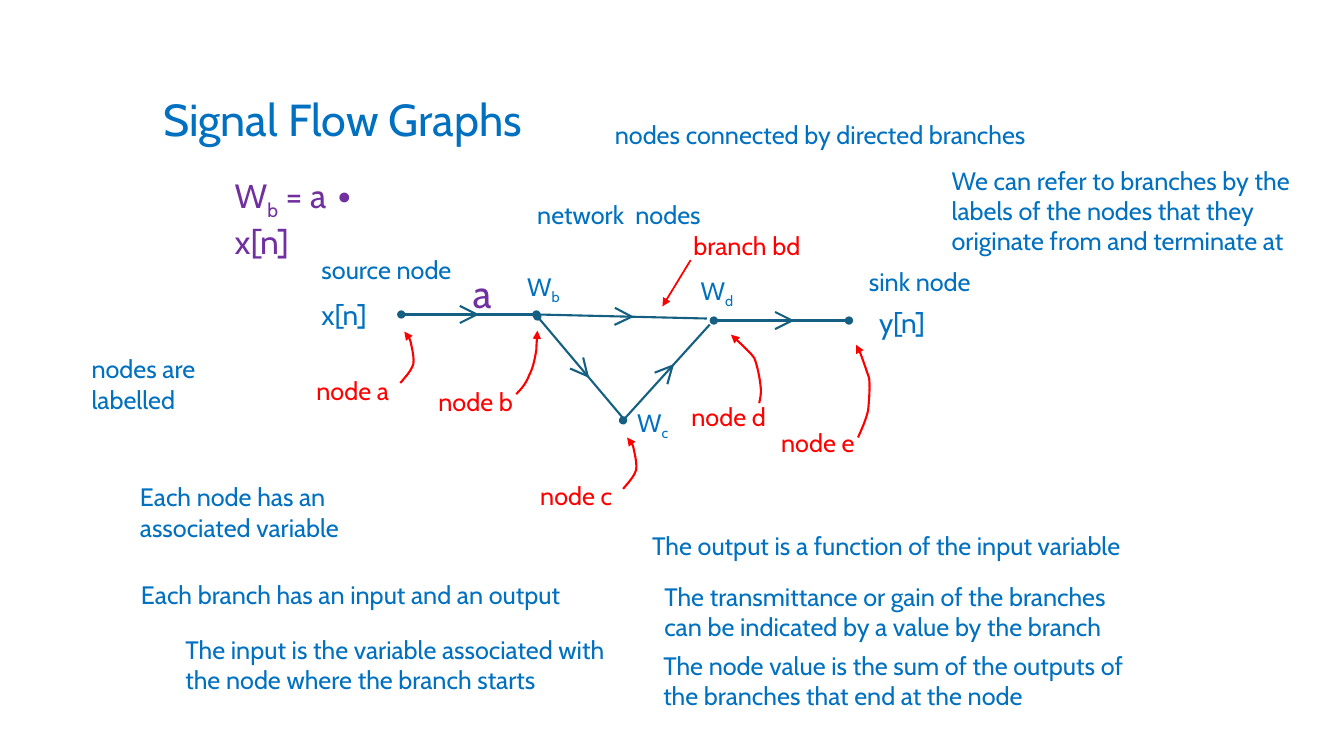
import math
from dataclasses import dataclass

import lxml.etree
import pptx
import pptx.dml.color
import pptx.enum.shapes
import pptx.enum.text
import pptx.oxml.ns
import pptx.util

Inches = pptx.util.Inches
Point = tuple[float, float]

FONT = "Cabin"
BLUE, RED, PURPLE, TEAL = "0070C0", "FF0000", "7030A0", "156082"
BARB_LENGTH, BARB_HALF_WIDTH = 0.17, 0.085
CURVE_STEPS = 6


@dataclass
class Label:
    text: str
    left: float
    top: float
    width: float
    height: float = 0.4
    color: str = BLUE
    size: int = 18
    subscript: str = ""
    rest: str = ""


@dataclass
class Branch:
    start: Point
    end: Point
    tip_share: float  # how far along the branch its direction mark sits
    tail: str = ""


@dataclass
class Pointer:
    start: Point
    curves: list[tuple[Point, Point, Point]]


def rgb(color: str) -> pptx.dml.color.RGBColor:
    return pptx.dml.color.RGBColor.from_string(color)


def style_line(shape, color: str, width: float, head: str = "", tail: str = "") -> None:
    shape.line.color.rgb = rgb(color)
    shape.line.width = pptx.util.Pt(width)
    line_xml = shape.line._get_or_add_ln()
    for tag, kind in {"a:headEnd": head, "a:tailEnd": tail}.items():
        if kind:
            lxml.etree.SubElement(line_xml, pptx.oxml.ns.qn(tag), type=kind)


def add_line(shapes, start: Point, end: Point, color: str, width: float,
             head: str = "", tail: str = "") -> None:
    line = shapes.add_connector(pptx.enum.shapes.MSO_CONNECTOR.STRAIGHT,
                                *map(Inches, (*start, *end)))
    style_line(line, color, width, head, tail)
    lxml.etree.SubElement(line._element.spPr, pptx.oxml.ns.qn("a:effectLst"))


def add_label(shapes, label: Label) -> None:
    box = shapes.add_textbox(*map(Inches, (label.left, label.top, label.width, label.height)))
    frame_format = {"word_wrap": True,
                    "auto_size": pptx.enum.text.MSO_AUTO_SIZE.SHAPE_TO_FIT_TEXT}
    for name, value in frame_format.items():
        setattr(box.text_frame, name, value)
    font_format = {"name": FONT, "size": pptx.util.Pt(label.size)}
    for text, lowered in ((label.text, False), (label.subscript, True), (label.rest, False)):
        if not text:
            continue
        run = box.text_frame.paragraphs[0].add_run()
        run.text = text
        for name, value in font_format.items():
            setattr(run.font, name, value)
        run.font.color.rgb = rgb(label.color)
        if lowered:
            run._r.get_or_add_rPr().set("baseline", "-25000")


def add_branch(shapes, branch: Branch) -> None:
    group = shapes.add_group_shape().shapes
    (x1, y1), (x2, y2) = branch.start, branch.end
    add_line(group, branch.start, branch.end, TEAL, 1.5, "oval", branch.tail)
    length = math.dist(branch.start, branch.end)
    ux, uy = (x2 - x1) / length, (y2 - y1) / length
    tip = (x1 + branch.tip_share * (x2 - x1), y1 + branch.tip_share * (y2 - y1))
    for side in (BARB_HALF_WIDTH, -BARB_HALF_WIDTH):
        barb = (tip[0] - BARB_LENGTH * ux + side * uy, tip[1] - BARB_LENGTH * uy - side * ux)
        add_line(group, barb, tip, TEAL, 1.5)


def bezier(p0: Point, p1: Point, p2: Point, p3: Point, t: float) -> Point:
    weights = ((1 - t) ** 3, 3 * t * (1 - t) ** 2, 3 * t * t * (1 - t), t ** 3)
    x, y = (sum(w * p[axis] for w, p in zip(weights, (p0, p1, p2, p3))) for axis in (0, 1))
    return x, y


def add_pointer(shapes, pointer: Pointer) -> None:
    points = [pointer.start]
    for curve in pointer.curves:
        begin = points[-1]
        points += [bezier(begin, *curve, step / CURVE_STEPS) for step in range(1, CURVE_STEPS + 1)]
    first, *others = [(Inches(x), Inches(y)) for x, y in points]
    outline = shapes.build_freeform(*first, scale=1.0)
    outline.add_line_segments(others, close=False)
    arrow = outline.convert_to_shape()
    arrow.fill.background()
    arrow.shadow.inherit = False
    style_line(arrow, RED, 1.5, tail="triangle")


def shifted(pointer: Pointer, dx: float, dy: float) -> Pointer:
    def move(point: Point) -> Point:
        return point[0] + dx, point[1] + dy

    return Pointer(move(pointer.start),
                   [(move(a), move(b), move(c)) for a, b, c in pointer.curves])


BRANCHES = [
    Branch((5.32, 3.12), (7.01, 3.16), 0.56),
    Branch((7.08, 3.18), (8.42, 3.18), 0.58, "oval"),
    Branch((5.33, 3.14), (6.19, 4.16), 0.58),
    Branch((6.18, 4.17), (7.04, 3.22), 0.57),
    Branch((3.98, 3.12), (5.32, 3.12), 0.56),
]

NODE_A = Pointer((3.97, 3.8), [
    ((4.02, 3.74), (4.08, 3.68), (4.1, 3.61)),
    ((4.11, 3.54), (4.08, 3.43), (4.07, 3.38)),
    ((4.05, 3.33), (4.03, 3.31), (4.01, 3.29))])
NODE_B = Pointer((5.12, 3.91), [
    ((5.18, 3.85), (5.22, 3.8), (5.25, 3.72)),
    ((5.29, 3.65), (5.31, 3.53), (5.32, 3.47)),
    ((5.32, 3.41), (5.33, 3.32), (5.33, 3.28))])
NODE_C = shifted(NODE_A, 2.21, 1.05)
NODE_D = Pointer((7.53, 4), [
    ((7.55, 3.91), (7.55, 3.88), (7.54, 3.8)),
    ((7.53, 3.73), (7.51, 3.62), (7.48, 3.55)),
    ((7.44, 3.49), (7.27, 3.34), (7.25, 3.32))])
NODE_E = Pointer((8.51, 4.34), [
    ((8.55, 4.25), (8.59, 4.16), (8.61, 4.07)),
    ((8.62, 3.97), (8.63, 3.84), (8.62, 3.75)),
    ((8.6, 3.7), (8.52, 3.44), (8.49, 3.42))])

LABELS = [
    Label("Signal Flow Graphs", 1.52, 0.86, 7.61, 0.64, size=32),
    # Signals, gain and node variables
    Label("x[n]", 3.09, 2.9, 0.66, 0.44, size=20),
    Label("y[n]", 8.62, 2.98, 0.8, 0.44, size=20),
    Label("a", 4.59, 2.62, 0.48, 0.57, PURPLE, 28),
    Label("W", 5.13, 2.64, 0.59, subscript="b"),
    Label("W", 6.85, 2.68, 0.59, subscript="d"),
    Label("W", 6.22, 3.99, 0.59, subscript="c"),
    Label("W", 2.23, 1.69, 1.97, 0.5, PURPLE, 24, "b", " = a ∙ x[n]"),
    # Names of nodes and branches
    Label("sink node", 8.52, 2.59, 1.65),
    Label("source node", 3.09, 2.47, 1.65),
    Label("network  nodes", 5.23, 1.93, 2.28),
    Label("node a", 3.04, 3.67, 1, color=RED),
    Label("node b", 4.25, 3.78, 1, color=RED),
    Label("node c", 5.26, 4.72, 1, color=RED),
    Label("node e", 7.65, 4.19, 1, color=RED),
    Label("node d", 6.76, 3.93, 1, color=RED),
    Label("branch bd", 6.78, 2.24, 1.34, color=RED),
    # Explanations
    Label("nodes connected by directed branches", 6, 1.13, 5.11),
    Label("nodes are labelled", 0.81, 3.46, 1.65, 0.71),
    Label("Each node has an associated variable", 1.29, 4.73, 2.74, 0.71),
    Label("We can refer to branches by the labels of the nodes that they "
          "originate from and terminate at", 9.34, 1.59, 3.8, 1.01),
    Label("Each branch has an input and an output", 1.3, 5.7, 4.58),
    Label("The input is the variable associated with the node where the branch starts",
          1.74, 6.24, 4.58, 0.71),
    Label("The output is a function of the input variable", 6.37, 5.21, 4.99),
    Label("The transmittance or gain of the branches can be indicated by a value by the branch",
          6.49, 5.72, 4.99, 0.71),
    Label("The node value is the sum of the outputs of the branches that end at the node",
          6.48, 6.4, 4.99, 0.71),
]


def main() -> None:
    deck = pptx.Presentation()
    deck.slide_width, deck.slide_height = Inches(13.33), Inches(7.5)
    shapes = deck.slides.add_slide(deck.slide_layouts[6]).shapes
    # Flow graph
    for branch in BRANCHES:
        add_branch(shapes, branch)
    # Pointers from the red names
    for pointer in (NODE_A, NODE_B, NODE_C, NODE_D, NODE_E):
        add_pointer(shapes, pointer)
    add_line(shapes, (6.85, 2.58), (6.57, 3.04), RED, 1.25, tail="triangle")
    # Text
    for label in LABELS:
        add_label(shapes, label)
    deck.save("out.pptx")


if __name__ == "__main__":
    main()
